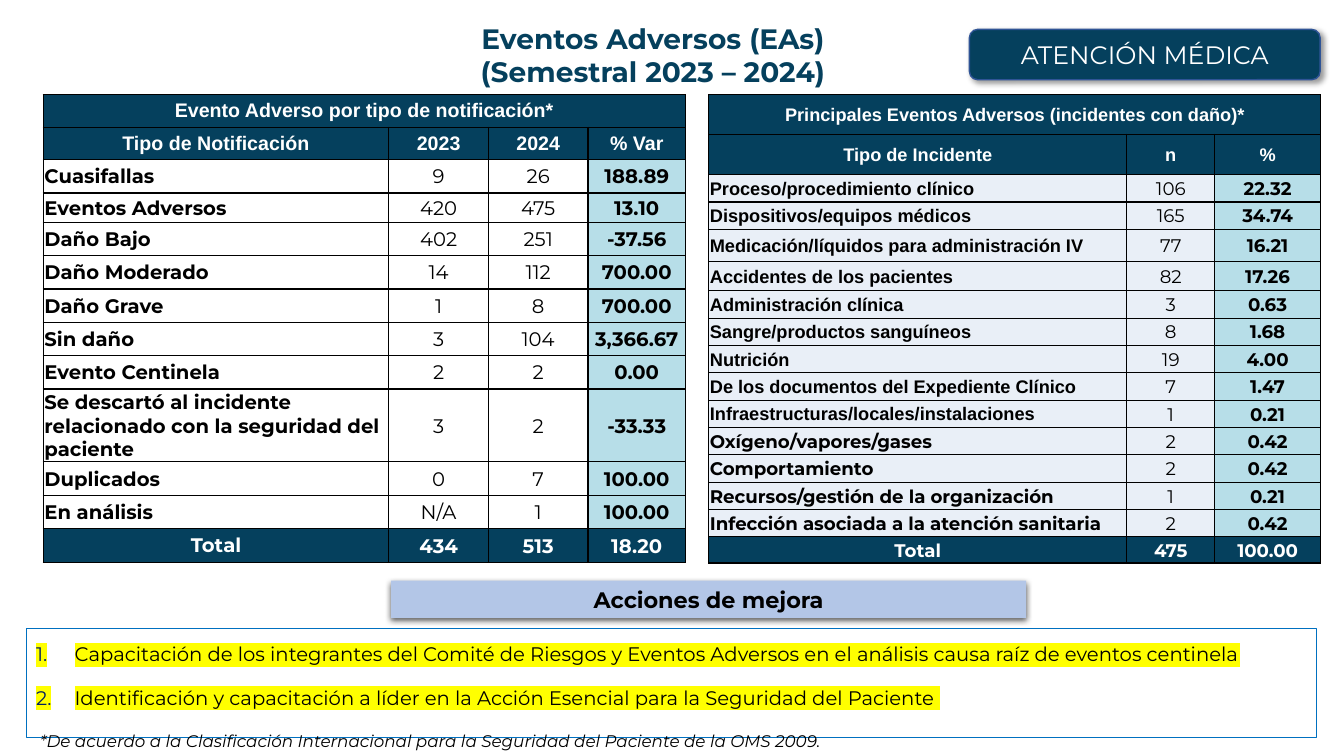
from dataclasses import dataclass, field
from typing import Any, Optional

from lxml import etree
from pptx import Presentation
from pptx import util as u
from pptx.dml import color
from pptx.enum import shapes, text
from pptx.oxml import ns

COLORS = {
    "navy": "05405D", "sky": "B7DEE8", "mist": "E9EFF7", "white": "FFFFFF",
    "black": "000000", "periwinkle": "B3C6E7", "outline": "0070C0",
    "badge_outline": "2F5496", "number": "002060", "marker": "FFFF00",
}
CENTER, LEFT, JUSTIFY = text.PP_ALIGN.CENTER, text.PP_ALIGN.LEFT, text.PP_ALIGN.JUSTIFY
MIDDLE, TOP = text.MSO_ANCHOR.MIDDLE, text.MSO_ANCHOR.TOP
WIDE_INSETS = (0.25, 0.13, 0.25, 0.13)
THIN_INSETS = (0.03, 0.03, 0.03, 0)


@dataclass(frozen=True)
class Shadow:
    alpha: int
    blur: float
    distance: float
    angle: int


@dataclass(frozen=True)
class Panel:
    """A box with text; lengths in cm. Without a kind it is a text box."""
    box: tuple[float, float, float, float]
    lines: list[str]
    font: dict[str, Any]
    kind: Optional[shapes.MSO_SHAPE] = None
    corner: Optional[float] = None
    ink: str = "black"
    fill: Optional[str] = None
    line: Optional[tuple[str, float]] = None
    shadow: Optional[Shadow] = None
    align: text.PP_ALIGN = CENTER
    anchor: text.MSO_ANCHOR = MIDDLE
    insets: tuple[float, ...] = WIDE_INSETS
    grows: bool = True
    numbered: bool = False


@dataclass(frozen=True)
class IncidentTable:
    """Title, header, body and total rows; lengths in cm."""
    left: float
    widths: list[float]
    row_height: float
    rows: list[list[str]]
    size: int
    body_fill: str
    header_insets: tuple[float, ...]
    arial_rows: int
    special_heights: dict[int, float] = field(default_factory=dict)


def apply(target: Any, values: dict[str, Any]) -> None:
    for name, value in values.items():
        setattr(target, name, value)


def rgb(name: str) -> color.RGBColor:
    return color.RGBColor.from_string(COLORS[name])


def add_xml(parent: Any, tag: str, **attributes: Any) -> Any:
    return etree.SubElement(parent, ns.qn(tag), {k: str(v) for k, v in attributes.items()})


def margins(insets: tuple[float, ...]) -> dict[str, Any]:
    sides = ("margin_left", "margin_top", "margin_right", "margin_bottom")
    return {side: u.Cm(inset) for side, inset in zip(sides, insets)}


def write(paragraph: Any, words: str, ink: str, font: dict[str, Any]) -> Any:
    run = paragraph.add_run()
    run.text = words
    run.font.color.rgb = rgb(ink)
    apply(run.font, font)
    return run


def add_number(paragraph: Any) -> None:
    properties = paragraph._p.get_or_add_pPr()
    properties.set("marL", str(u.Cm(0.97)))
    properties.set("indent", str(-u.Cm(0.97)))
    add_xml(add_xml(properties, "a:buClr"), "a:srgbClr", val=COLORS["number"])
    add_xml(properties, "a:buAutoNum", type="arabicPeriod")


def highlight(run: Any) -> None:
    properties = run._r.get_or_add_rPr()
    marker = add_xml(properties, "a:highlight")
    add_xml(marker, "a:srgbClr", val=COLORS["marker"])
    properties.find(ns.qn("a:latin")).addprevious(marker)


def add_shadow(shape: Any, shadow: Shadow) -> None:
    effects = shape._element.spPr.find(ns.qn("a:effectLst"))
    outer = add_xml(effects, "a:outerShdw", blurRad=u.Pt(shadow.blur), dist=u.Pt(shadow.distance),
                    dir=shadow.angle * 60000, algn="t", rotWithShape=0)
    tint = add_xml(outer, "a:srgbClr", val=COLORS["black"])
    add_xml(tint, "a:alpha", val=shadow.alpha * 1000)


def draw_panel(slide: Any, panel: Panel) -> None:
    box = [u.Cm(length) for length in panel.box]
    if panel.kind is None:
        shape = slide.shapes.add_textbox(*box)
    else:
        shape = slide.shapes.add_shape(panel.kind, *box)
        shape.shadow.inherit = False
    if panel.corner is not None:
        shape.adjustments[0] = panel.corner
    if panel.fill:
        shape.fill.solid()
        shape.fill.fore_color.rgb = rgb(panel.fill)
    else:
        shape.fill.background()
    if panel.line:
        shape.line.color.rgb = rgb(panel.line[0])
        shape.line.width = u.Pt(panel.line[1])
    else:
        shape.line.fill.background()
    if panel.shadow:
        add_shadow(shape, panel.shadow)
    frame = shape.text_frame
    sizing = text.MSO_AUTO_SIZE.SHAPE_TO_FIT_TEXT if panel.grows else text.MSO_AUTO_SIZE.NONE
    apply(frame, {"word_wrap": True, "auto_size": sizing,
                  "vertical_anchor": panel.anchor, **margins(panel.insets)})
    for index, words in enumerate(panel.lines):
        paragraph = frame.add_paragraph() if index else frame.paragraphs[0]
        if panel.numbered:
            add_number(paragraph)
            paragraph.line_spacing = 1.14
            if index:
                apply(paragraph, {"space_before": u.Pt(12), "space_after": u.Pt(12)})
        paragraph.alignment = panel.align
        run = write(paragraph, words, panel.ink, panel.font)
        if panel.numbered:
            highlight(run)


def draw_table(slide: Any, data: IncidentTable) -> None:
    last_row, last_column = len(data.rows) - 1, len(data.widths) - 1
    heights = [data.special_heights.get(r, data.row_height) for r in range(last_row + 1)]
    table = slide.shapes.add_table(
        last_row + 1, last_column + 1, u.Cm(data.left), u.Cm(2.39),
        u.Cm(sum(data.widths)), u.Cm(sum(heights))).table
    apply(table, {"first_row": False, "horz_banding": False})
    for column, width in zip(table.columns, data.widths):
        column.width = u.Cm(width)
    for row, height in zip(table.rows, heights):
        row.height = u.Cm(height)
    table.cell(0, 0).merge(table.cell(0, last_column))
    for r, row in enumerate(data.rows):
        for c in range(last_column + 1):
            cell = table.cell(r, c)
            dark = r < 2 or r == last_row
            wide = r < 2 or (r == last_row and c == 0)
            apply(cell, {"vertical_anchor": MIDDLE,
                         **margins(data.header_insets if wide else THIN_INSETS)})
            # Borders
            for side in ("a:lnL", "a:lnR", "a:lnT", "a:lnB"):
                border = add_xml(cell._tc.get_or_add_tcPr(), side, w=u.Pt(1))
                add_xml(add_xml(border, "a:solidFill"), "a:srgbClr", val=COLORS["black"])
            cell.fill.solid()
            cell.fill.fore_color.rgb = rgb(
                "navy" if dark else "sky" if c == last_column else data.body_fill)
            if c >= len(row):
                continue
            arial = r < 2 or (c == 0 and r < 2 + data.arial_rows)
            paragraph = cell.text_frame.paragraphs[0]
            paragraph.alignment = CENTER if dark or c else LEFT
            write(paragraph, row[c], "white" if dark else "black", {
                "name": "Arial" if arial else "Montserrat", "size": u.Pt(data.size),
                "bold": dark or c in (0, last_column)})


def montserrat(size: int, **style: bool) -> dict[str, Any]:
    return {"name": "Montserrat", "size": u.Pt(size), **style}


def split_rows(block: str) -> list[list[str]]:
    return [line.split("|") for line in block.strip().splitlines()]


NOTIFICATIONS = IncidentTable(1.09, [8.71, 2.51, 2.51, 2.46], 0.84, split_rows("""
Evento Adverso por tipo de notificación*
Tipo de Notificación|2023|2024|% Var
Cuasifallas|9|26|188.89
Eventos Adversos|420|475|13.10
Daño Bajo|402|251|-37.56
Daño Moderado|14|112|700.00
Daño Grave|1|8|700.00
Sin daño|3|104|3,366.67
Evento Centinela|2|2|0.00
Se descartó al incidente relacionado con la seguridad del paciente|3|2|-33.33
Duplicados|0|7|100.00
En análisis|N/A|1|100.00
Total|434|513|18.20
"""), 14, "white", WIDE_INSETS, 0, {0: 0.79, 1: 0.79, 3: 0.74, 9: 1.14, 12: 0.79})

INCIDENTS = IncidentTable(17.86, [10.54, 2.21, 2.67], 0.69, split_rows("""
Principales Eventos Adversos (incidentes con daño)*
Tipo de Incidente|n|%
Proceso/procedimiento clínico|106|22.32
Dispositivos/equipos médicos|165|34.74
Medicación/líquidos para administración IV|77|16.21
Accidentes de los pacientes|82|17.26
Administración clínica|3|0.63
Sangre/productos sanguíneos|8|1.68
Nutrición|19|4.00
De los documentos del Expediente Clínico|7|1.47
Infraestructuras/locales/instalaciones|1|0.21
Oxígeno/vapores/gases|2|0.42
Comportamiento|2|0.42
Recursos/gestión de la organización|1|0.21
Infección asociada a la atención sanitaria|2|0.42
Total|475|100.00
"""), 13, "mist", THIN_INSETS, 9, {0: 0.99, 1: 1.02, 4: 0.81, 5: 0.74, 15: 0.66})

RECT, ROUNDED = shapes.MSO_SHAPE.RECTANGLE, shapes.MSO_SHAPE.ROUNDED_RECTANGLE
TITLE = Panel((8.48, 0.18, 15.95, 2.41), ["Eventos Adversos (EAs)", "(Semestral 2023 – 2024)"],
              montserrat(20, bold=True), ROUNDED, 0.316, ink="navy", anchor=TOP)
ACTIONS = Panel((0.66, 15.85, 32.51, 2.74), [
    "Capacitación de los integrantes del Comité de Riesgos y Eventos Adversos "
    "en el análisis causa raíz de eventos centinela",
    "Identificación y capacitación a líder en la Acción Esencial para la Seguridad del Paciente ",
], montserrat(14), RECT, line=("outline", 0.75), align=JUSTIFY, anchor=TOP,
    insets=(0.25,) * 4, numbered=True)
ACTIONS_HEADING = Panel((9.86, 14.63, 16, 0.94), ["Acciones de mejora"], montserrat(16, bold=True),
                        RECT, fill="periwinkle", shadow=Shadow(63, 4.5, 1.5, 90))
FOOTNOTE = Panel((0.76, 18.29, 27.05, 0.76), [
    "*De acuerdo a la Clasificación Internacional para la Seguridad del Paciente de la OMS 2009.",
], montserrat(12, italic=True), align=LEFT, anchor=TOP)
BADGE = Panel((24.43, 0.74, 8.84, 1.27), ["ATENCIÓN MÉDICA"], montserrat(18), ROUNDED, 0.167,
              ink="white", fill="navy", line=("badge_outline", 1),
              shadow=Shadow(40, 4, 3, 45), grows=False)


def main() -> None:
    deck = Presentation()
    apply(deck, {"slide_width": u.Cm(33.87), "slide_height": u.Cm(19.05)})
    slide = deck.slides.add_slide(deck.slide_layouts[6])
    for part in (NOTIFICATIONS, TITLE, ACTIONS, ACTIONS_HEADING, INCIDENTS, FOOTNOTE, BADGE):
        draw = draw_table if isinstance(part, IncidentTable) else draw_panel
        draw(slide, part)
    deck.save("out.pptx")


if __name__ == "__main__":
    main()
